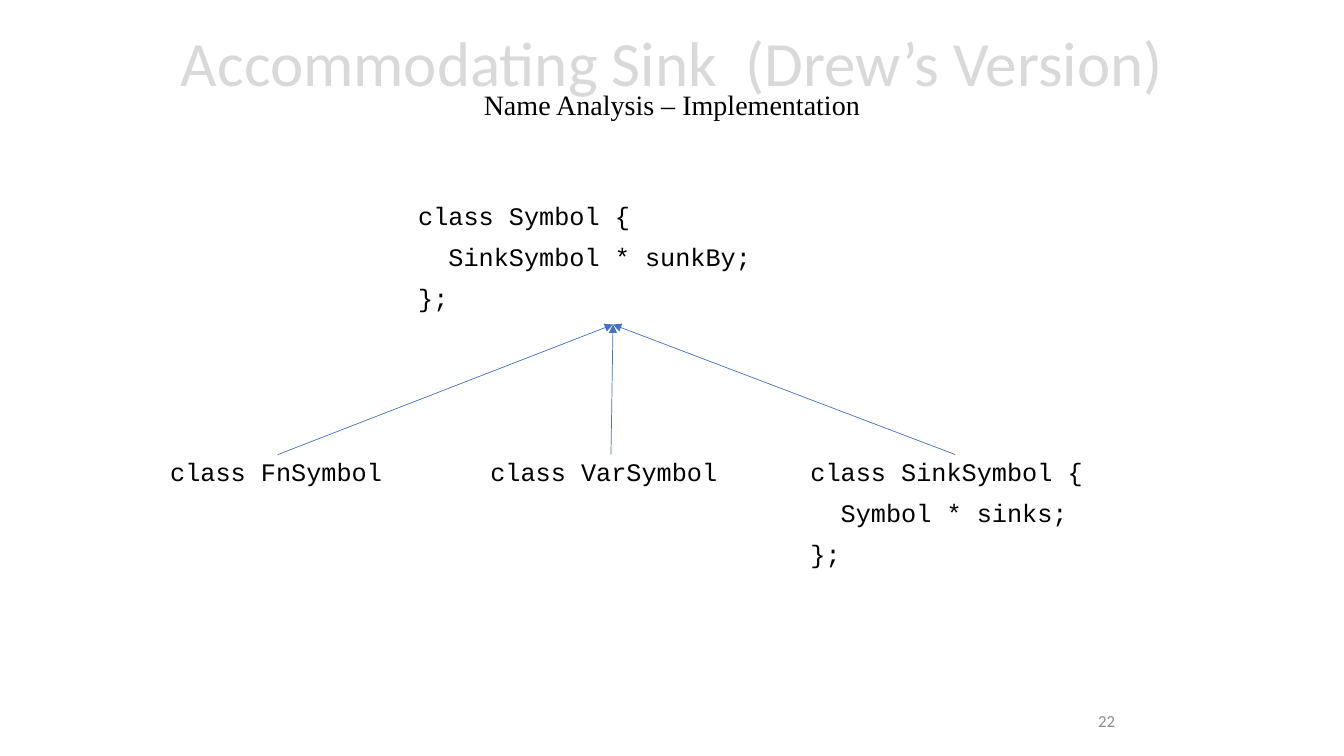
from lxml import etree
from pptx import Presentation
from pptx.dml.color import RGBColor
from pptx.enum.shapes import MSO_CONNECTOR
from pptx.enum.text import MSO_ANCHOR, PP_ALIGN
from pptx.oxml.ns import qn
from pptx.util import Inches, Pt

LEFT, MID, RIGHT = PP_ALIGN.LEFT, PP_ALIGN.CENTER, PP_ALIGN.RIGHT
TOP, CENTER = MSO_ANCHOR.TOP, MSO_ANCHOR.MIDDLE
STRAIGHT = MSO_CONNECTOR.STRAIGHT

# Content
TITLE = "Accommodating Sink  (Drew’s Version)"
TOPIC = "Name Analysis – Implementation"
PAGE = "22"
BASE = ["class Symbol {", "  SinkSymbol * sunkBy;", "};"]
KINDS = [  # box width, code lines
    (2.33, ["class FnSymbol"]),
    (2.59, ["class VarSymbol"]),
    (3.07, ["class SinkSymbol {", "  Symbol * sinks;", "};"]),
]

# Formats
COLORS = {"title": "D9D9D9", "text": "000000", "page": "8C8C8C", "arrow": "4472C4"}
FONTS = {
    "title": {"name": "Calibri", "size": Pt(45)},
    "topic": {"name": "Times New Roman", "size": Pt(20)},
    "code": {"name": "Courier New", "size": Pt(18)},
    "page": {"name": "Calibri", "size": Pt(12)},
}
PARAS = {
    "title": {"alignment": MID, "line_spacing": 0.7},
    "code": {"alignment": LEFT, "line_spacing": 0.9, "space_before": Pt(10)},
    "page": {"alignment": RIGHT},
}

# Grid
WIDE, HIGH = 13.33, 7.5
COL, STEP = 1.59, 3.175
BASE_BOX = (4.05, 1.97, 4.06, 1.25)
ROW = 4.51
HEIGHTS = {1: 0.47, 3: 1.25}

deck = Presentation()
deck.slide_width, deck.slide_height = Inches(WIDE), Inches(HIGH)
slide = deck.slides.add_slide(deck.slide_layouts[6])


def style(item, form):
    for key, value in form.items():
        setattr(item, key, value)


def add_run(para, text, kind):
    run = para.add_run()
    run.text = text
    style(run.font, FONTS[kind])
    run.font.color.rgb = RGBColor.from_string(COLORS.get(kind, COLORS["text"]))
    return run


def add_box(box, lines, kind, anchor=TOP):
    frame = slide.shapes.add_textbox(*map(Inches, box)).text_frame
    style(frame, {"word_wrap": True, "vertical_anchor": anchor})
    for i, line in enumerate(lines):
        para = frame.add_paragraph() if i else frame.paragraphs[0]
        style(para, PARAS[kind])
        run = add_run(para, line, kind)
    return para, run


def add_arrow(start, end):
    arrow = slide.shapes.add_connector(STRAIGHT, *map(Inches, start + end))
    arrow.line.color.rgb = RGBColor.from_string(COLORS["arrow"])
    arrow.line.width = Pt(0.5)
    etree.SubElement(arrow.line._get_or_add_ln(), qn("a:tailEnd"), type="triangle")
    etree.SubElement(arrow._element.spPr, qn("a:effectLst"))


# Page number and title
add_box((8.83, 6.95, 2.33, 0.4), [PAGE], "page", CENTER)
para, run = add_box((0, 0.09, WIDE, 1.45), [TITLE], "title", CENTER)
edge = etree.Element(qn("a:ln"), w=str(Pt(1)))
run.font._element.insert(0, edge)
para.add_line_break()
add_run(para, TOPIC, "topic")

# Base class, with an arrow from each derived class
add_box(BASE_BOX, BASE, "code")
left, top, width, height = BASE_BOX
tip = (left + width / 2, top + height)
for i, (width, lines) in enumerate(KINDS):
    left = COL + i * STEP
    add_box((left, ROW, width, HEIGHTS[len(lines)]), lines, "code")
    add_arrow((left + width / 2, ROW), tip)

deck.save("out.pptx")
